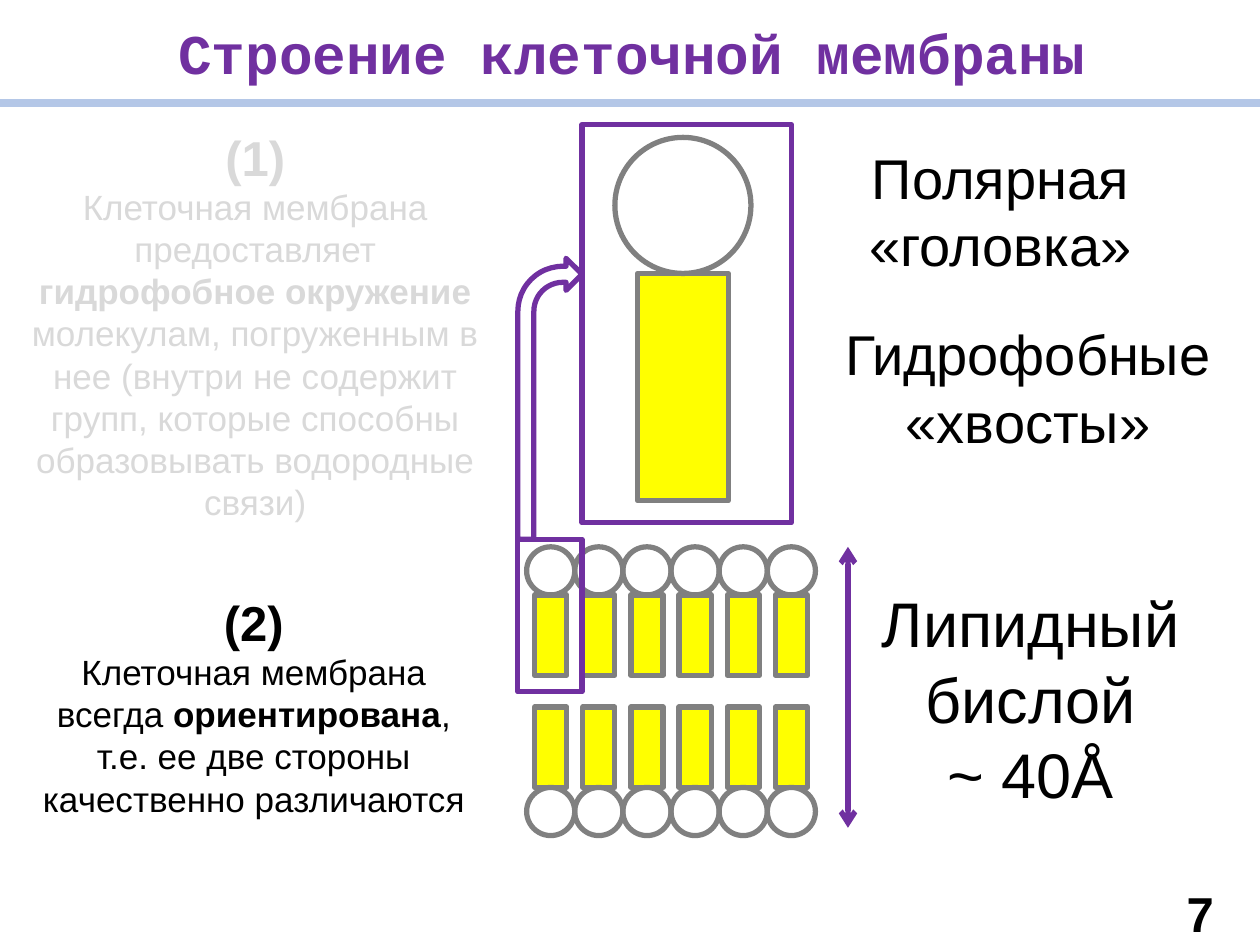
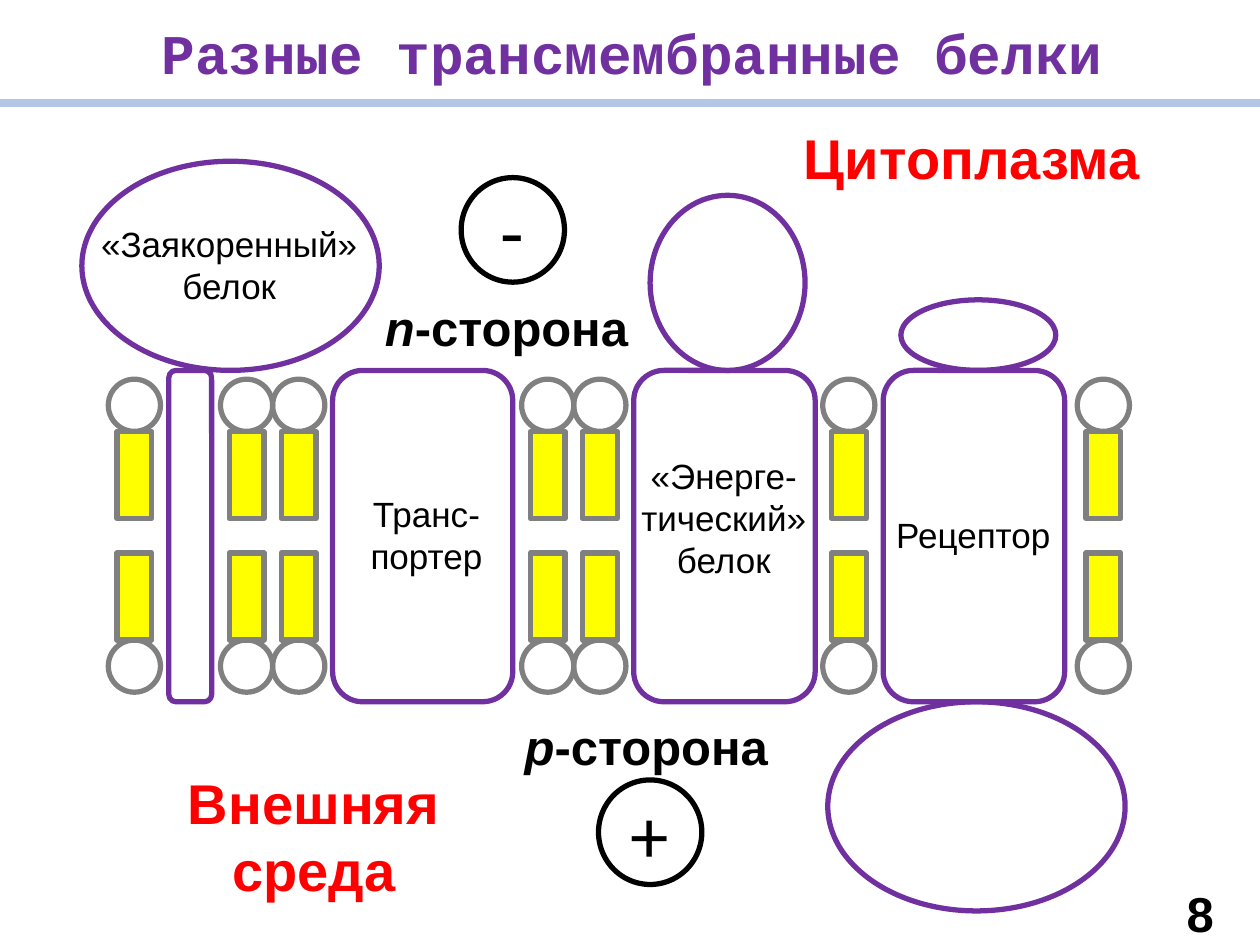
from dataclasses import dataclass

from lxml.etree import SubElement
from pptx import Presentation
from pptx.dml.color import RGBColor
from pptx.enum.shapes import MSO_CONNECTOR, MSO_SHAPE
from pptx.enum.text import MSO_ANCHOR, MSO_AUTO_SIZE, PP_ALIGN
from pptx.oxml.ns import qn
from pptx.util import Inches, Pt


@dataclass(frozen=True)
class Theme:
    purple: str = "7030A0"
    band: str = "B4C7E7"
    tail: str = "FFFF00"
    gray: str = "808080"
    red: str = "FF0000"
    black: str = "000000"
    white: str = "FFFFFF"
    font: str = "Arial"
    title_font: str = "Courier New"
    sign_font: str = "Calibri"
    small: int = 20
    medium: int = 28
    large: int = 32
    huge: int = 36
    sign: int = 44
    outline: float = 3
    band_width: float = 4.75


T = Theme()
COLS, ROWS = 100, 75
BOLD = {"bold": True}
ITALIC = {"italic": True}
HEADING = {"size": T.medium, "bold": True}


def cells(*lengths):
    """Turn grid cells (a tenth of an inch each) into lengths."""
    return [Inches(n / 10) for n in lengths]


def write(tf, paragraphs, size=T.small, color=T.black, font=T.font,
          bold=False, italic=False, before=0):
    """Fill a frame; a paragraph is a string or a list of (text, overrides)."""
    tf.word_wrap = True
    for i, runs in enumerate(paragraphs):
        p = tf.add_paragraph() if i else tf.paragraphs[0]
        p.alignment = PP_ALIGN.CENTER
        if before:
            p.space_before = Pt(before)
        for text, own in [(runs, {})] if isinstance(runs, str) else runs:
            r = p.add_run()
            r.text = text
            r.font.name = font
            r.font.size = Pt(own.get("size", size))
            r.font.bold = own.get("bold", bold)
            r.font.italic = own.get("italic", italic)
            r.font.color.rgb = RGBColor.from_string(color)


def label(s, box, *paragraphs, **fmt):
    tf = s.shapes.add_textbox(*cells(*box)).text_frame
    write(tf, paragraphs, **fmt)
    tf.auto_size = MSO_AUTO_SIZE.SHAPE_TO_FIT_TEXT


def shape(s, kind, box, line=T.purple, fill=None, opacity=None):
    sp = s.shapes.add_shape(kind, *cells(*box))
    sp.shadow.inherit = False
    if fill:
        sp.fill.solid()
        sp.fill.fore_color.rgb = RGBColor.from_string(fill)
    else:
        sp.fill.background()
    if opacity:
        color = sp.fill._xPr.find(".//" + qn("a:srgbClr"))
        SubElement(color, qn("a:alpha"), val=str(opacity * 1000))
    if line:
        sp.line.color.rgb = RGBColor.from_string(line)
        sp.line.width = Pt(T.outline)
    else:
        sp.line.fill.background()
    return sp


def line(s, ends, color, width, arrows=False):
    c = s.shapes.add_connector(MSO_CONNECTOR.STRAIGHT, *cells(*ends))
    c.line.color.rgb = RGBColor.from_string(color)
    c.line.width = Pt(width)
    if arrows:
        for end in ("a:headEnd", "a:tailEnd"):
            SubElement(c.line._get_or_add_ln(), qn(end), type="arrow")
    SubElement(c._element.spPr, qn("a:effectLst"))


def lipid(s, x, y, d, upright=True):
    """Draw a head of diameter d at x, y with its tail below or above."""
    length = 1.67 * d
    tail_y = y + d if upright else y - length
    shape(s, MSO_SHAPE.RECTANGLE, (x + d / 6, tail_y, d * 2 / 3, length),
          T.gray, T.tail)
    shape(s, MSO_SHAPE.OVAL, (x, y, d, d), T.gray)


def bilayer(s, lefts, y, d):
    """Draw facing lipid pairs; the whole bilayer is six heads high."""
    for x in lefts:
        lipid(s, x, y, d)
        lipid(s, x, y + 5 * d, d, upright=False)


def charge(s, box, sign):
    tf = shape(s, MSO_SHAPE.OVAL, box, T.black).text_frame
    tf.vertical_anchor = MSO_ANCHOR.MIDDLE
    write(tf, [sign], size=T.sign, font=T.sign_font)


def titled_slide(prs, title, number):
    s = prs.slides.add_slide(prs.slide_layouts[5])
    sp = s.shapes.title
    sp.left, sp.top, sp.width, sp.height = cells(5.2, 1.1, 90, 5.6)
    tf = sp.text_frame
    tf.margin_left = tf.margin_right = tf.margin_bottom = 0
    tf.margin_top = Inches(0.04)
    tf.vertical_anchor = MSO_ANCHOR.MIDDLE
    tf.auto_size = MSO_AUTO_SIZE.NONE
    write(tf, [title], size=T.large, font=T.title_font, color=T.purple,
          bold=True)
    line(s, (0, 8.2, COLS, 8.2), T.band, T.band_width)
    page = s.shapes.add_textbox(*cells(91.3, 69.6, 7.9, 5.4))
    write(page.text_frame, [str(number)], before=T.medium / 5, **HEADING)
    return s


def membrane_structure(prs):
    s = titled_slide(prs, "Строение клеточной мембраны", 7)
    d, left, top = 3.82, 41.8, 43.4
    bilayer(s, [left + i * d for i in range(6)], top, d)
    lipid(s, 48.8, 10.9, 10.8)
    shape(s, MSO_SHAPE.RECTANGLE, (46.2, 9.9, 16.6, 31.6))
    shape(s, MSO_SHAPE.RECTANGLE, (41.1, 42.8, 5.1, 12.1))
    arrow = shape(s, MSO_SHAPE.BENT_ARROW, (41.1, 20.5, 5.1, 22.3))
    for i, share in enumerate((0.25, 0.25, 0.25, 0.7)):
        arrow.adjustments[i] = share
    line(s, (67.3, top, 67.3, 65.7), T.purple, T.outline, arrows=True)

    label(s, (62.5, 10.9, 33.8, 9.5), "Полярная «головка»", size=T.large)
    label(s, (65.3, 24.9, 32.6, 11.8), "Гидрофобные «хвосты»", size=T.large)
    label(s, (68.5, 45.9, 26.6, 19.2), "Липидный", "бислой", "~ 40Å",
          size=T.huge)
    label(s, (0, 9.6, 40.5, 32.6), [("(1)", HEADING)],
          [("Клеточная мембрана предоставляет ", {}),
           ("гидрофобное окружение ", BOLD),
           ("молекулам, погруженным в нее (внутри не содержит групп, "
            "которые способны образовывать водородные связи)", {})])
    label(s, (1.8, 46.5, 36.7, 19.2), [("(2)", HEADING)],
          [("Клеточная мембрана всегда ", {}),
           ("ориентирована", BOLD),
           (", т.е. ее две стороны качественно различаются", {})])
    shape(s, MSO_SHAPE.RECTANGLE, (1.3, 9.6, 38, 33.8), None, T.white,
          opacity=85)


def membrane_proteins(prs):
    s = titled_slide(prs, "Разные трансмембранные белки", 8)
    d = 4.14
    bilayer(s, (8.6, 17.5, 17.5 + d, 41.4, 41.4 + d, 65.3, 85.5), 30.1, d)

    top, height = 29.4, 26.3
    for x, width in ((13.4, 3.4), (26.4, 14.3), (50.3, 14.4), (70.1, 14.4)):
        shape(s, MSO_SHAPE.ROUNDED_RECTANGLE, (x, top, width, height))
    for x, width, domain in ((6.5, 23.6, 16.6), (51.6, 12.3, 13.9),
                             (71.5, 12.3, 5.6)):
        shape(s, MSO_SHAPE.OVAL, (x, top - domain, width, domain))
    shape(s, MSO_SHAPE.OVAL, (65.7, top + height, 23.6, 16.6))

    label(s, (5.2, 17.2, 26, 8), "«Заякоренный» белок")
    label(s, (26.7, 38.6, 14.3, 8), "Транс-портер")
    label(s, (49.6, 35.6, 15.7, 11.1), "«Энерге-тический»", "белок")
    label(s, (69.4, 40.3, 15.7, 4.4), "Рецептор")

    for box, text in (((60.5, 9.3, 33.3, 6.4), "Цитоплазма"),
                      ((12, 60.5, 25.8, 11.8), "Внешняя среда")):
        label(s, box, text, size=T.large, color=T.red, bold=True)
    for box, letter in (((28.4, 23.1, 23.6, 5.7), "n"),
                        ((37.3, 56.4, 28, 5.7), "p")):
        label(s, box, [(letter, ITALIC), ("-сторона", {})], **HEADING)
    charge(s, (36.6, 14.1, 8.2, 8.3), "-")
    charge(s, (47.5, 61.9, 8.2, 8.3), "+")


def main():
    prs = Presentation()
    prs.slide_width, prs.slide_height = cells(COLS, ROWS)
    membrane_structure(prs)
    membrane_proteins(prs)
    prs.save("out.pptx")


if __name__ == "__main__":
    main()
